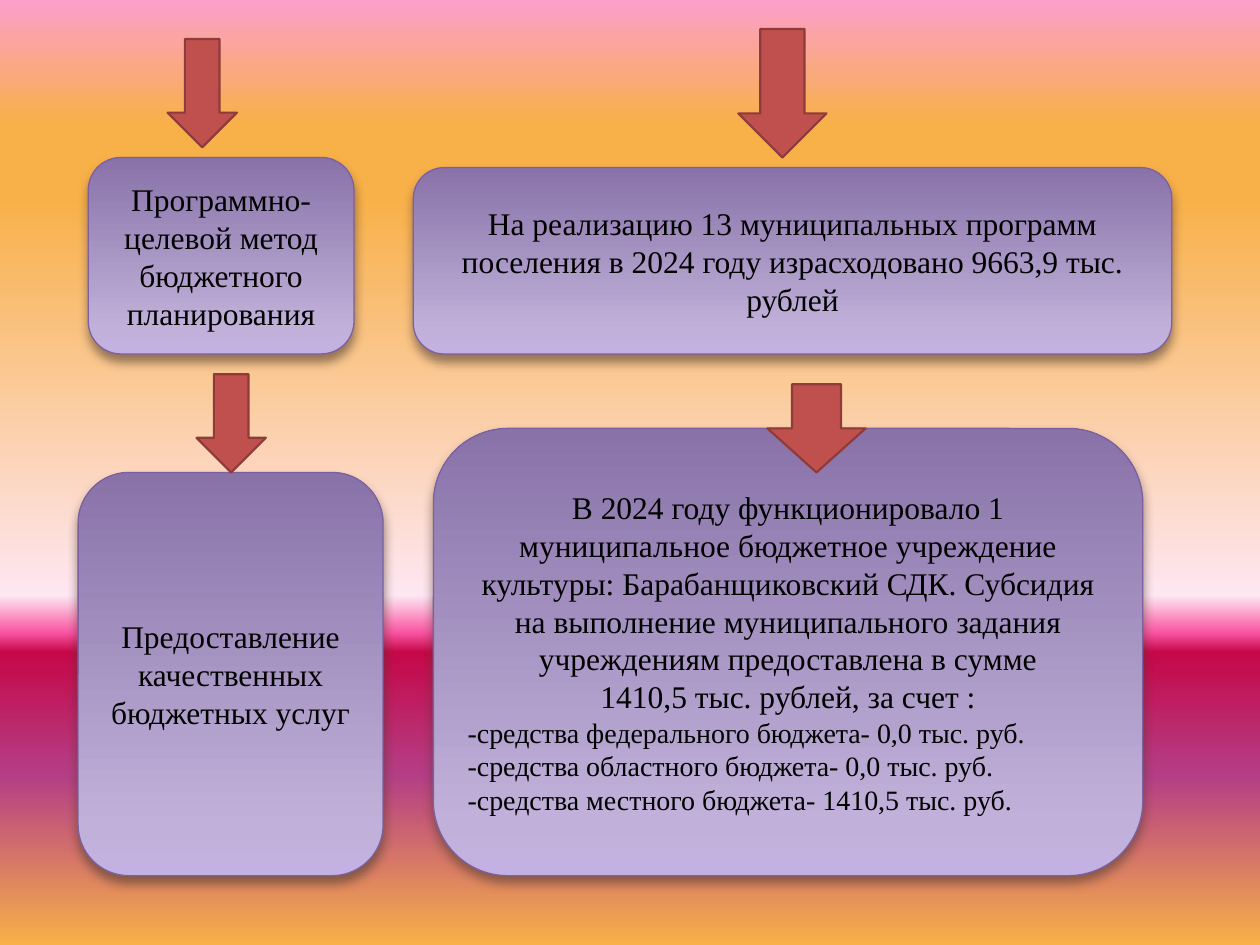
from lxml import etree
from pptx import Presentation
from pptx.dml.color import RGBColor
from pptx.enum.shapes import MSO_SHAPE
from pptx.enum.text import MSO_ANCHOR, PP_ALIGN
from pptx.oxml.ns import qn
from pptx.util import Inches, Pt

ROUND_RECT, DOWN_ARROW = MSO_SHAPE.ROUNDED_RECTANGLE, MSO_SHAPE.DOWN_ARROW
CENTER, LEFT, MIDDLE = PP_ALIGN.CENTER, PP_ALIGN.LEFT, MSO_ANCHOR.MIDDLE

FONT = "Times New Roman"
BLACK = RGBColor(0x00, 0x00, 0x00)
RED = RGBColor(0xC0, 0x50, 0x4D)
DARK_RED = RGBColor(0x8E, 0x3B, 0x39)
VIOLET = RGBColor(0x7D, 0x60, 0xA0)
SHADOW = RGBColor(0x4E, 0x3B, 0x30)
ORANGE = RGBColor(0xF8, 0xB0, 0x49)
SKY_STOPS = [
    (0, RGBColor(0xFC, 0x9F, 0xCB)), (13, ORANGE), (21, ORANGE),
    (63, RGBColor(0xFE, 0xE7, 0xF2)), (67, RGBColor(0xF9, 0x52, 0xA0)),
    (69, RGBColor(0xC5, 0x08, 0x49)), (82, RGBColor(0xB4, 0x3E, 0x85)),
    (100, ORANGE),
]
BOX_STOPS = [
    (0, RGBColor(0xC4, 0xB1, 0xE3)), (12, RGBColor(0xC1, 0xB1, 0xDA)),
    (100, RGBColor(0x88, 0x72, 0xA8)),
]

METHOD = "Программно-целевой метод бюджетного планирования"
PROGRAMS = ("На реализацию 13 муниципальных программ поселения "
            "в 2024 году израсходовано 9663,9 тыс. рублей")
SERVICES = "Предоставление качественных бюджетных услуг"
SUBSIDY = ("В 2024 году функционировало 1 муниципальное бюджетное учреждение "
           "культуры: Барабанщиковский СДК. Субсидия на выполнение "
           "муниципального задания учреждениям предоставлена в сумме\v"
           "1410,5 тыс. рублей, за счет :")
SOURCES = [
    "-средства федерального бюджета- 0,0 тыс. руб.",
    "-средства областного бюджета- 0,0 тыс. руб.",
    "-средства местного бюджета- 1410,5 тыс. руб.",
]

# Column boxes (left, top, width, height) and the arrows that lead into them
LEFT_COLUMN = [
    ((0.7, 1.25, 2.11, 1.56), (1.33, 0.31, 0.55, 0.86), [METHOD]),
    ((0.62, 3.75, 2.42, 3.2), (1.56, 2.97, 0.55, 0.78), [SERVICES]),
]
RIGHT_COLUMN = [
    ((3.28, 1.33, 6.02, 1.48), (5.86, 0.23, 0.7, 1.02), [PROGRAMS]),
    ((3.44, 3.4, 5.63, 3.55), (6.09, 3.05, 0.78, 0.7), [SUBSIDY] + SOURCES),
]


def set_gradient(fill, element, stops, angle):
    """Fill with the stops; angle is counter-clockwise, as in python-pptx."""
    fill.gradient()
    fill.gradient_angle = angle
    gs_list = element.find(".//" + qn("a:gsLst"))
    for gs in list(gs_list):
        gs_list.remove(gs)
    for position, color in stops:
        gs = etree.SubElement(gs_list, qn("a:gs"), pos=str(position * 1000))
        etree.SubElement(gs, qn("a:srgbClr"), val=str(color))


def add_shadow(sp):
    effects = sp._element.spPr.find(qn("a:effectLst"))
    shadow = etree.SubElement(
        effects, qn("a:outerShdw"), blurRad=str(Pt(6)), dist=str(Pt(4)),
        dir="5400000", rotWithShape="0")
    color = etree.SubElement(shadow, qn("a:srgbClr"), val=str(SHADOW))
    etree.SubElement(color, qn("a:alpha"), val="60000")


def add_text(p, text, size=18, align=CENTER, color=BLACK):
    p.text = text
    p.alignment = align
    for r in p.runs:
        r.font.name = FONT
        r.font.size = Pt(size)
        r.font.color.rgb = color


def add_outlined(slide, kind, box, line_color, line_width):
    sp = slide.shapes.add_shape(kind, *(Inches(v) for v in box))
    sp.shadow.inherit = False
    sp.line.color.rgb = line_color
    sp.line.width = Pt(line_width)
    return sp


def add_box(slide, box, texts):
    sp = add_outlined(slide, ROUND_RECT, box, VIOLET, 0.75)
    set_gradient(sp.fill, sp._element.spPr, BOX_STOPS, 90)
    add_shadow(sp)
    tf = sp.text_frame
    tf.word_wrap = True
    tf.vertical_anchor = MIDDLE
    add_text(tf.paragraphs[0], texts[0])
    for text in texts[1:]:
        add_text(tf.add_paragraph(), text, size=16, align=LEFT)


def add_arrow(slide, box):
    sp = add_outlined(slide, DOWN_ARROW, box, DARK_RED, 1.25)
    sp.fill.solid()
    sp.fill.fore_color.rgb = RED


def add_column(slide, steps):
    # Boxes first, so that the arrows lie on top
    for box, _, texts in steps:
        add_box(slide, box, texts)
    for _, arrow, _ in steps:
        add_arrow(slide, arrow)


def main():
    prs = Presentation()
    prs.slide_width, prs.slide_height = Inches(10), Inches(7.5)
    slide = prs.slides.add_slide(prs.slide_layouts[6])

    # Background
    set_gradient(slide.background.fill, slide._element, SKY_STOPS, 270)

    # Flow columns
    add_column(slide, LEFT_COLUMN)
    add_column(slide, RIGHT_COLUMN)
    prs.save("out.pptx")


if __name__ == "__main__":
    main()
